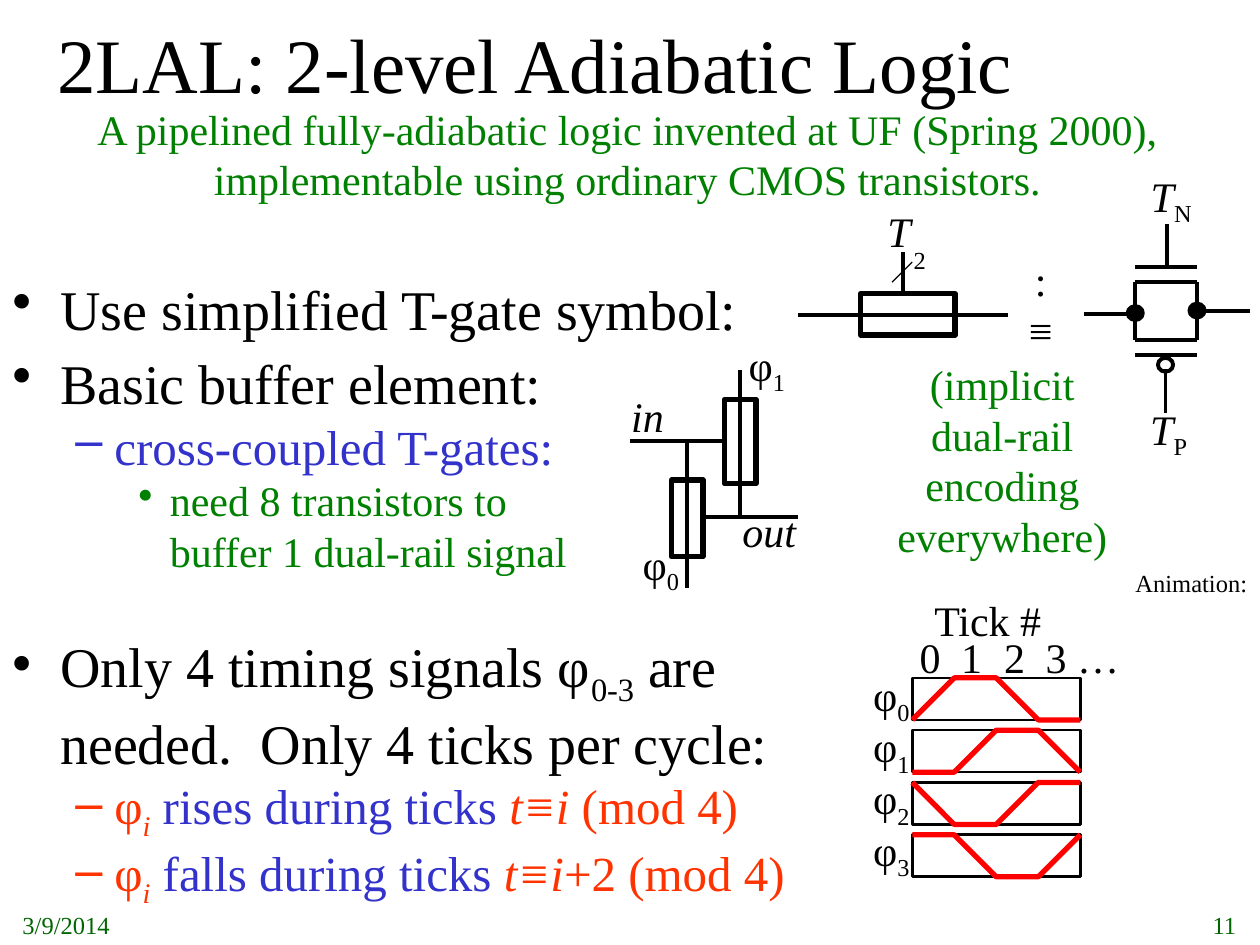
from typing import NamedTuple
from lxml.etree import SubElement as Sub
from pptx import Presentation
from pptx.dml.color import RGBColor as RGB
from pptx.enum.shapes import MSO_CONNECTOR as Link, MSO_SHAPE as Kind
from pptx.enum.text import MSO_ANCHOR as Anchor, PP_ALIGN as Align
from pptx.oxml.ns import qn
from pptx.util import Cm, Pt

BLACK = RGB(0, 0, 0)
WHITE = RGB(255, 255, 255)
GREEN = RGB(0, 128, 0)
DARK = RGB(0, 102, 0)
BLUE = RGB(0x33, 0x33, 0xCC)
ORANGE = RGB(0xFF, 0x33, 0)
RED = RGB(255, 0, 0)
FACE = "Times New Roman"


class Run(NamedTuple):
    text: str
    slant: bool = False
    sub: bool = False
    tint: RGB | None = None


class Label(NamedTuple):
    x: float
    y: float
    w: float
    h: float
    runs: list[Run]
    size: int = 24
    tint: RGB = BLACK
    align: Align = Align.CENTER
    anchor: Anchor = Anchor.MIDDLE
    wrap: bool = False


class Level(NamedTuple):
    mark: str
    left: float
    hang: float
    size: int
    tint: RGB


class Item(NamedTuple):
    level: Level
    runs: list[Run]
    gap: float = 0


class Box(NamedTuple):
    x: float
    y: float
    w: float
    h: float
    kind: Kind = Kind.RECTANGLE
    fill: RGB | None = WHITE
    width: float = 3


class Wire(NamedTuple):
    x1: float
    y1: float
    x2: float
    y2: float
    width: float = 2.25


def cm(inch: float) -> Cm:
    return Cm(inch * 2.54)


def style(para, size: int, tint: RGB) -> None:
    font = para.font
    font.name, font.size, font.color.rgb = FACE, Pt(size), tint


def write(para, runs: list[Run]) -> None:
    for item in runs:
        for row, text in enumerate(item.text.split("\n")):
            if row:
                para.add_line_break()
            run = para.add_run()
            run.text = text
            if item.slant:
                run.font.italic = True
            if item.tint:
                run.font.color.rgb = item.tint
            if item.sub:
                run._r.get_or_add_rPr().set("baseline", "-25000")


def label(slide, spec: Label, tabs: tuple[float, ...] = ()) -> None:
    box = slide.shapes.add_textbox(cm(spec.x), cm(spec.y), cm(spec.w), cm(spec.h))
    frame = box.text_frame
    frame.word_wrap, frame.vertical_anchor = spec.wrap, spec.anchor
    para = frame.paragraphs[0]
    para.alignment = spec.align
    if tabs:
        stops = Sub(para._p.get_or_add_pPr(), qn("a:tabLst"))
        for stop in tabs:
            Sub(stops, qn("a:tab"), pos=str(cm(stop)), algn="l")
    style(para, spec.size, spec.tint)
    write(para, spec.runs)


def outline(slide, items: list[Item]) -> None:
    box = slide.shapes.add_textbox(cm(0), cm(2.13), cm(6.67), cm(5.12))
    frame = box.text_frame
    frame.word_wrap = True
    for row, item in enumerate(items):
        para = frame.add_paragraph() if row else frame.paragraphs[0]
        level = item.level
        if item.gap:
            para.space_before = Pt(item.gap)
        props = para._p.get_or_add_pPr()
        props.set("marL", str(cm(level.left)))
        props.set("indent", str(cm(-level.hang)))
        Sub(props, qn("a:buChar"), char=level.mark)
        style(para, level.size, level.tint)
        write(para, item.runs)


def block(slide, spec: Box) -> None:
    shape = slide.shapes.add_shape(spec.kind, cm(spec.x), cm(spec.y), cm(spec.w), cm(spec.h))
    shape.shadow.inherit = False
    if spec.fill is None:
        shape.fill.background()
    else:
        shape.fill.solid()
        shape.fill.fore_color.rgb = spec.fill
    shape.line.color.rgb, shape.line.width = BLACK, Pt(spec.width)


def wire(slide, spec: Wire) -> None:
    line = slide.shapes.add_connector(
        Link.STRAIGHT, cm(spec.x1), cm(spec.y1), cm(spec.x2), cm(spec.y2))
    line.line.color.rgb, line.line.width = BLACK, Pt(spec.width)
    Sub(line._element.spPr, qn("a:effectLst"))


def wave(slide, phase: int) -> None:
    left, top, step = 7.24, 5.38 + phase * 0.415, 1 / 3
    block(slide, Box(left, top, 4 * step, step, width=1.5))
    drop = (1, 0, 0, 1)
    dots = [(cm(left + k * step), cm(top + step * drop[(k - phase) % 4])) for k in range(5)]
    path = slide.shapes.build_freeform(*dots[0])
    path.add_line_segments(dots[1:], close=False)
    shape = path.convert_to_shape()
    shape.shadow.inherit = False
    shape.fill.background()
    shape.line.color.rgb, shape.line.width = RED, Pt(3)


def phi(x: float, y: float, index: int) -> Label:
    return Label(x, y, 0.49, 0.5, [Run("φ"), Run(str(index), sub=True)])


def tee(x: float, y: float, w: float, mark: str) -> Label:
    return Label(x, y, w, 0.5, [Run("T", True), Run(mark, sub=True)])


def edge(verb: str, rest: str) -> list[Run]:
    return [Run("φ"), Run("i", True, True), Run(f" {verb} during ticks ", tint=BLUE),
            Run("t≡i", True), Run(f"{rest} (mod 4)")]


TOP = Level("•", 0.38, 0.38, 32, BLACK)
MID = Level("–", 0.81, 0.31, 28, BLUE)
HOT = MID._replace(tint=ORANGE)
LOW = Level("•", 1.25, 0.25, 24, GREEN)
ITEMS = [
    Item(TOP, [Run("Use simplified T-gate symbol:")]),
    Item(TOP, [Run("Basic buffer element:")], 4),
    Item(MID, [Run("cross-coupled T-gates:")]),
    Item(LOW, [Run("need 8 transistors to \nbuffer 1 dual-rail signal")]),
    Item(TOP, [Run("Only 4 timing signals φ"), Run("0-3", sub=True),
               Run(" are \nneeded.  Only 4 ticks per cycle:")], 32),
    Item(HOT, edge("rises", "")),
    Item(HOT, edge("falls", "+2")),
]
DOT = Box(8.95, 2.43, 0.12, 0.11, Kind.OVAL, BLACK, 2.25)
BOXES = [
    DOT, DOT._replace(x=9.44, y=2.41), DOT._replace(x=9.19, y=2.84, fill=None),
    Box(6.83, 2.33, 0.75, 0.33), Box(5.75, 3.17, 0.25, 0.67), Box(5.33, 3.81, 0.25, 0.61),
]
WIRES = [
    *(Wire(9.01, y, 9.5, y) for y in (2.12, 2.24, 2.7, 2.82)),
    *(Wire(x, 2.24, x, 2.7) for x in (9.01, 9.5)),
    Wire(8.6, 2.49, 9.01, 2.49), Wire(9.5, 2.47, 9.92, 2.47),
    Wire(9.26, 1.78, 9.26, 2.12), Wire(9.25, 2.93, 9.25, 3.28),
    Wire(6.33, 2.5, 8, 2.5), Wire(7.17, 2, 7.17, 2.33), Wire(7.08, 2.24, 7.24, 2.08, 0.75),
    Wire(5.87, 2.94, 5.87, 4.11), Wire(5.45, 3.5, 5.45, 4.67),
    Wire(5, 3.5, 5.75, 3.5), Wire(5.58, 4.1, 6.33, 4.1),
]
NOTE = Label(0.67, 0.77, 8.62, 0.9, [
    Run("A pipelined fully-adiabatic logic invented at UF (Spring 2000),\n"
        "implementable using ordinary CMOS transistors.")], 24, GREEN, anchor=Anchor.TOP)
DATE = Label(0.08, 7.17, 2.08, 0.25, [Run("3/9/2014")], 14, DARK, Align.LEFT, Anchor.TOP, True)
LABELS = [
    Label(0, 0.08, 8.5, 0.83, [Run("2LAL: 2-level Adiabatic Logic")], 44, wrap=True),
    NOTE, DATE, DATE._replace(x=7.83, runs=[Run("11")], align=Align.RIGHT),
    NOTE._replace(x=7.02, y=2.8, w=1.87, h=1.7,
                  runs=[Run("(implicit\ndual-rail\nencoding\neverywhere)")]),
    tee(9.02, 1.33, 0.55, "N"), tee(9.02, 3.18, 0.51, "P"),
    Label(6.94, 1.58, 0.39, 0.5, [Run("T", True)]),
    Label(7.15, 1.9, 0.3, 0.33, [Run("2")], 14),
    Label(8.02, 2.17, 0.48, 0.5, [Run(":\n≡")]),
    Label(4.91, 3.05, 0.46, 0.5, [Run("in", True)]),
    Label(5.79, 3.96, 0.63, 0.5, [Run("out", True)]),
    phi(5.84, 2.67, 1), phi(5, 4.25, 0),
    Label(7.31, 4.67, 1.06, 0.5, [Run("Tick #")]),
    Label(8.91, 4.46, 1.09, 0.33, [Run("Animation:")], 14),
    *(phi(6.83, 5.29 + n * 0.41, n) for n in range(4)),
]
TICKS = Label(7.2, 4.96, 1.78, 0.5, [Run("0\t1\t2\t3 …")], align=Align.LEFT, wrap=True)


def main() -> None:
    deck = Presentation()
    deck.slide_width, deck.slide_height = cm(10), cm(7.5)
    slide = deck.slides.add_slide(deck.slide_layouts[6])
    outline(slide, ITEMS)
    for spec in BOXES:
        block(slide, spec)
    for spec in WIRES:
        wire(slide, spec)
    for phase in range(4):
        wave(slide, phase)
    for spec in LABELS:
        label(slide, spec)
    label(slide, TICKS, (0.33, 0.67, 1))
    deck.save("out.pptx")


if __name__ == "__main__":
    main()
